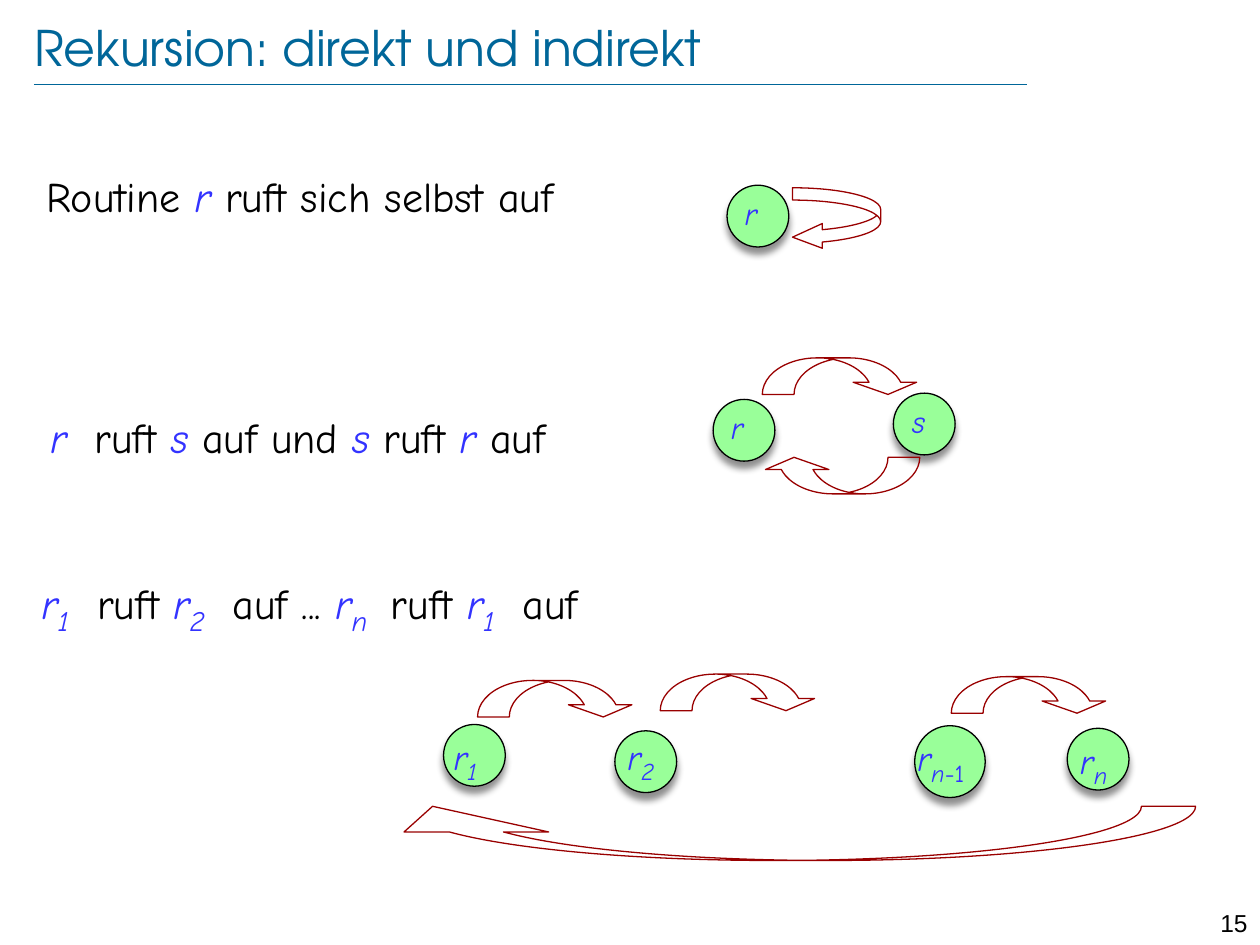
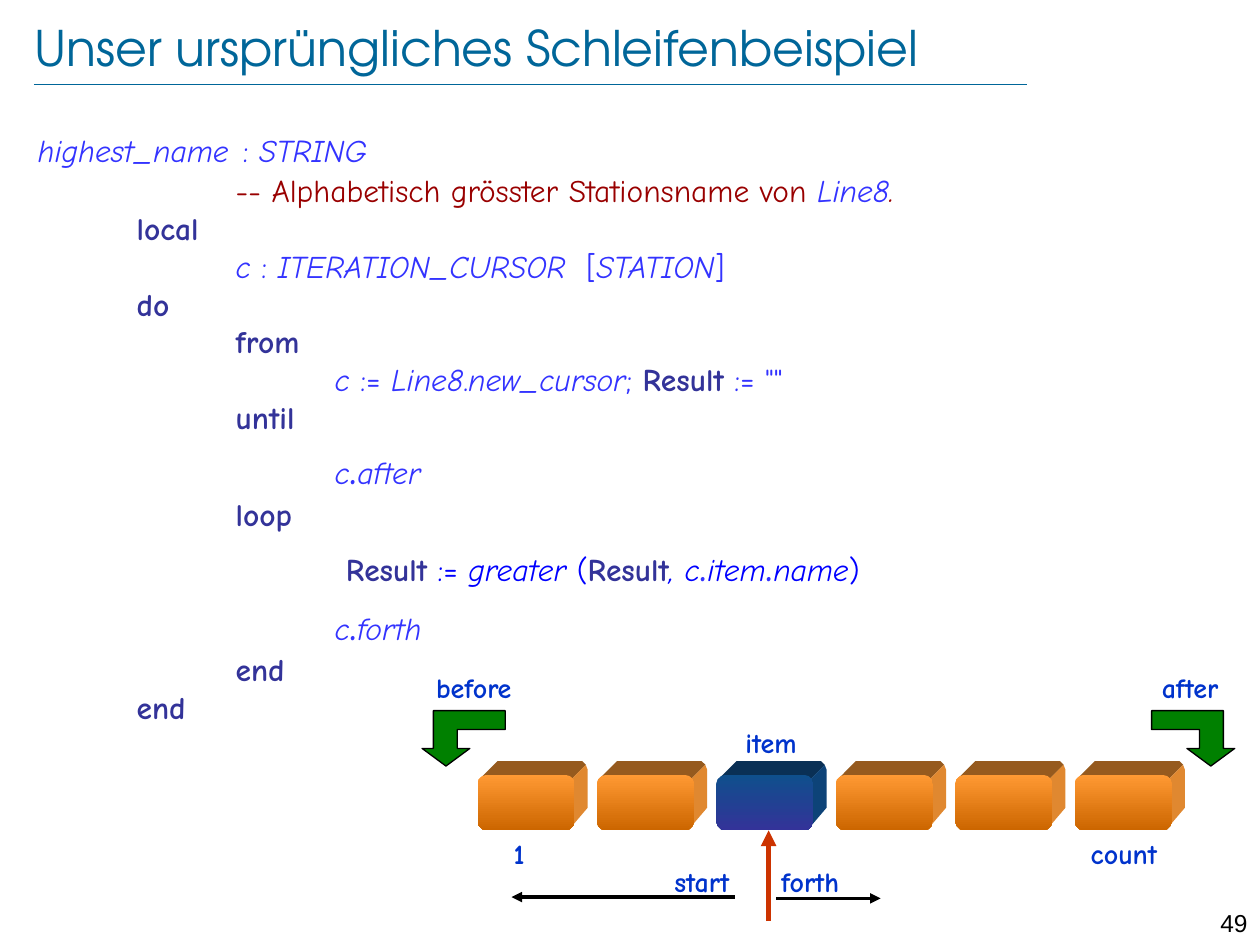
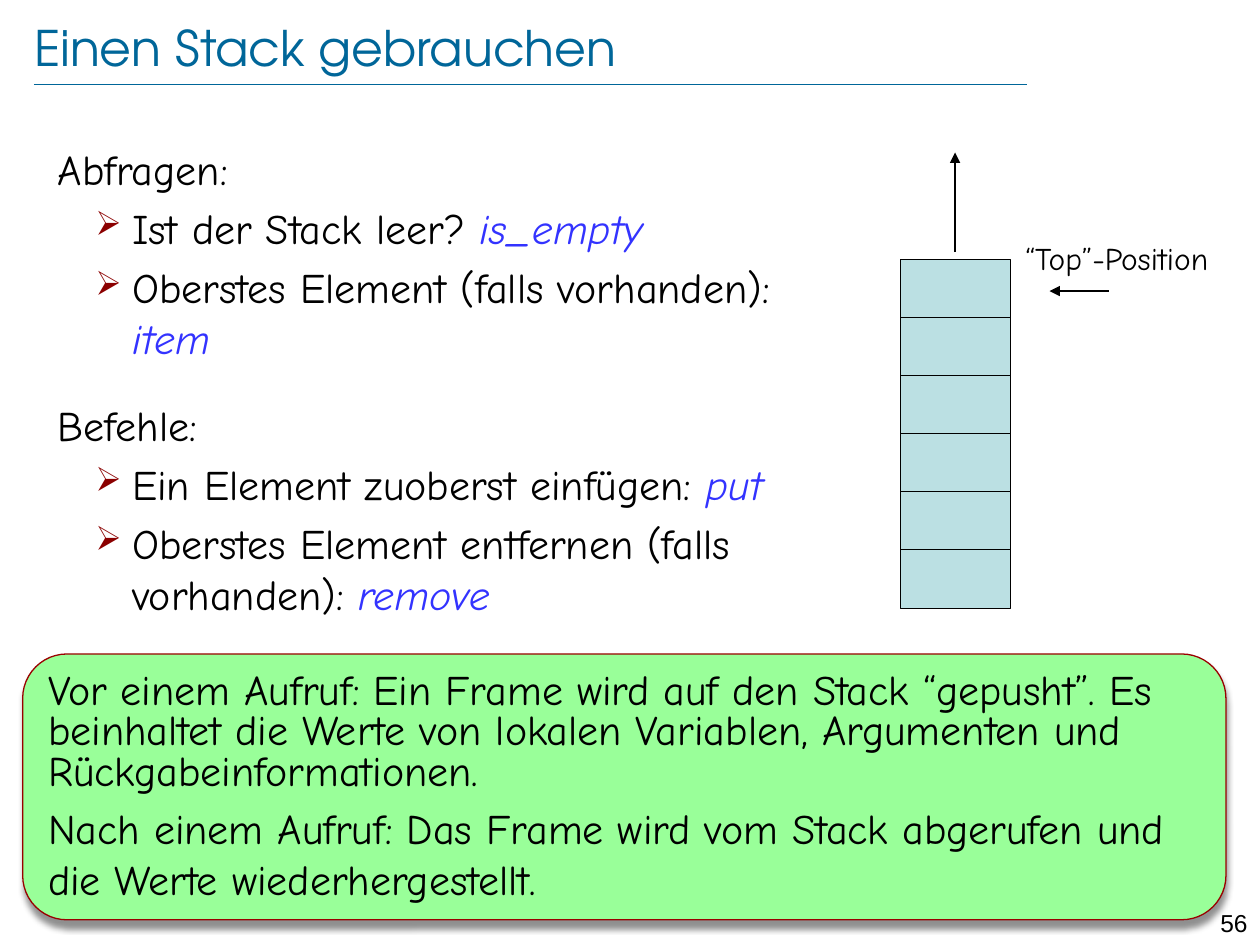
from typing import NamedTuple

from lxml.etree import SubElement
from pptx import Presentation
from pptx.dml.color import RGBColor
from pptx.enum.shapes import MSO_CONNECTOR, MSO_SHAPE
from pptx.enum.text import MSO_ANCHOR, PP_ALIGN
from pptx.oxml.ns import qn
from pptx.util import Inches, Pt

WIDE, HIGH = Inches(10), Inches(7.5)
COL, ROW = WIDE / 100, HIGH / 75

INK = {
    "teal": "006699", "black": "000000", "violet": "3333FF", "navy": "333399",
    "blue": "0000FF", "label": "0033CC", "wine": "990000", "bullet": "8B0000",
    "mint": "99FF99", "ice": "BBE0E3", "green": "008000", "red": "CC3300",
    "amber": "FF9933", "rust": "CC6600", "brown": "965A1E", "tan": "E08830",
    "sea": "0F4F8C", "night": "0A3055", "steel": "0D4378",
}
HAND = "Comic Neue"
TAB = 0.786


class Box(NamedTuple):
    """Left, top, width and height in grid columns and rows."""
    col: float
    row: float
    wide: float
    high: float

    def emu(self) -> tuple[int, ...]:
        return (round(self.col * COL), round(self.row * ROW),
                round(self.wide * COL), round(self.high * ROW))


class Style(NamedTuple):
    ink: str
    bold: bool = False
    slant: bool = False
    grow: int = 0
    drop: int = 0
    face: str = HAND


class Line(NamedTuple):
    """One paragraph: its runs, and how it is set."""
    runs: list
    depth: int = 0
    before: float = 0
    pitch: float = 1.0
    bullet: bool = False


class Ball(NamedTuple):
    box: Box
    tag: Box
    runs: list
    size: int


class Curve(NamedTuple):
    box: Box
    bends: tuple
    kind: MSO_SHAPE = MSO_SHAPE.CURVED_DOWN_ARROW
    flip: bool = False


class Arrow(NamedTuple):
    start: tuple
    end: tuple
    ink: str
    width: float
    head: bool = True


class Cube(NamedTuple):
    """Colours of a block: front from and to, top, side."""
    light: str
    dark: str
    top: str
    side: str


STYLES = {
    "title": Style("teal", face="TeX Gyre Adventor"),
    "page": Style("black", face="Arial"),
    "text": Style("black"),
    "name": Style("violet", slant=True),
    "gap": Style("violet", slant=True, grow=6),
    "sign": Style("violet"),
    "dot": Style("violet", grow=10),
    "sub": Style("violet", slant=True, grow=4, drop=-25),
    "low": Style("violet", grow=4, drop=-25),
    "key": Style("navy", bold=True),
    "note": Style("wine"),
    "stop": Style("wine", slant=True),
    "call": Style("blue", slant=True),
    "mark": Style("blue"),
    "label": Style("label", bold=True),
}


def shade(name: str) -> RGBColor:
    return RGBColor.from_string(INK[name])


def apply(target, values: dict) -> None:
    for key, value in values.items():
        setattr(target, key, value)


def add_run(para, kind: str, text: str, size: int) -> None:
    style = STYLES[kind]
    run = para.add_run()
    run.text = text
    apply(run.font, {"name": style.face, "size": Pt(size + style.grow),
                     "bold": style.bold, "italic": style.slant})
    run.font.color.rgb = shade(style.ink)
    if style.drop:
        run.font._element.set("baseline", str(style.drop * 1000))


def add_tabs(para) -> None:
    stops = SubElement(para._p.get_or_add_pPr(), qn("a:tabLst"))
    for step in range(1, 6):
        SubElement(stops, qn("a:tab"), pos=str(Inches(TAB * step)), algn="l")


def add_bullet(para) -> None:
    props = para._p.get_or_add_pPr()
    apply_xml = {"marL": Inches(0.59), "indent": Inches(-0.29), "lvl": 1}
    for key, value in apply_xml.items():
        props.set(key, str(value))
    tint = SubElement(props, qn("a:buClr"))
    SubElement(tint, qn("a:srgbClr"), val=INK["bullet"])
    SubElement(props, qn("a:buSzPct"), val="80000")
    SubElement(props, qn("a:buChar"), char="➢")


def write(frame, lines: list[Line], size: int, align=PP_ALIGN.LEFT) -> None:
    frame.word_wrap = True
    for index, line in enumerate(lines):
        para = frame.add_paragraph() if index else frame.paragraphs[0]
        if line.bullet:
            add_bullet(para)
        if line.depth:
            add_tabs(para)
            para.add_run().text = "\t" * line.depth
            para.runs[0].font.size = Pt(size)
        apply(para, {"alignment": align, "space_before": Pt(line.before),
                     "line_spacing": line.pitch})
        for kind, text in line.runs:
            add_run(para, kind, text, size)


def add_text(slide, box: Box, lines: list[Line], size: int,
             align=PP_ALIGN.LEFT, tight: bool = False):
    frame = slide.shapes.add_textbox(*box.emu()).text_frame
    if tight:
        apply(frame, dict.fromkeys(
            ("margin_left", "margin_top", "margin_right", "margin_bottom"), 0))
    write(frame, lines, size, align)
    return frame


def paint(shape, fill: str = "", edge: str = "") -> None:
    shape.shadow.inherit = False
    if fill:
        shape.fill.solid()
        shape.fill.fore_color.rgb = shade(fill)
    else:
        shape.fill.background()
    if edge:
        shape.line.color.rgb = shade(edge)
        shape.line.width = Pt(0.75)
    else:
        shape.line.fill.background()


def add_form(slide, kind, box: Box, fill: str = "", edge: str = ""):
    shape = slide.shapes.add_shape(kind, *box.emu())
    paint(shape, fill, edge)
    return shape


def add_outline(slide, points: list[tuple], fill: str, edge: str = "") -> None:
    spots = [(round(x * COL), round(y * ROW)) for x, y in points]
    maker = slide.shapes.build_freeform(*spots[0])
    maker.add_line_segments(spots[1:])
    paint(maker.convert_to_shape(), fill, edge)


def cast(shape) -> None:
    """Drop a soft shadow straight down."""
    effects = shape._element.spPr.find(qn("a:effectLst"))
    drop = SubElement(effects, qn("a:outerShdw"), blurRad=str(Pt(4)), dist=str(Pt(4)),
                      dir="5400000", algn="ctr", rotWithShape="0")
    tint = SubElement(drop, qn("a:srgbClr"), val=INK["black"])
    SubElement(tint, qn("a:alpha"), val="43000")


def add_arrow(slide, arrow: Arrow) -> None:
    (x, y), (u, v) = arrow.start, arrow.end
    link = slide.shapes.add_connector(
        MSO_CONNECTOR.STRAIGHT, round(x * COL), round(y * ROW), round(u * COL), round(v * ROW))
    link.line.color.rgb = shade(arrow.ink)
    link.line.width = Pt(arrow.width)
    if arrow.head:
        SubElement(link.line._get_or_add_ln(), qn("a:tailEnd"), type="triangle")
    SubElement(link._element.spPr, qn("a:effectLst"))


def add_ball(slide, ball: Ball) -> None:
    cast(add_form(slide, MSO_SHAPE.OVAL, ball.box, "mint", "black"))
    add_text(slide, ball.tag, [Line(ball.runs)], ball.size, tight=True)


def add_curve(slide, curve: Curve) -> None:
    shape = add_form(slide, curve.kind, curve.box, edge="wine")
    for index, bend in enumerate(curve.bends):
        shape.adjustments[index] = bend
    if curve.flip:
        for key in ("flipH", "flipV"):
            shape._element.spPr.xfrm.set(key, "1")


def add_cube(slide, box: Box, cube: Cube) -> None:
    x, y, right, base = box.col, box.row, box.col + box.wide, box.row + box.high
    back, lift = 1.05, 1.1
    add_outline(slide, [(x + 0.2, y + 0.3), (x + 1.6, y - lift), (right + 0.6, y - lift),
                        (right + 0.9, y - 0.8), (right - 0.2, y + 0.3)], cube.top)
    add_outline(slide, [(right - 0.2, y + 0.3), (right + 0.9, y - 0.8),
                        (right + back, y - 0.4), (right + back, base - 1.8),
                        (right - 0.4, base - 0.1)], cube.side)
    front = add_form(slide, MSO_SHAPE.ROUNDED_RECTANGLE, box)
    front.fill.gradient()
    front.fill.gradient_angle = 270
    for stop, name in zip(front.fill.gradient_stops, (cube.light, cube.dark)):
        stop.color.rgb = shade(name)


def add_slide(deck, title: str, page: int):
    """Blank slide with title, rule and page number."""
    slide = deck.slides.add_slide(deck.slide_layouts[6])
    add_arrow(slide, Arrow((2.7, 6.7), (81.5, 6.7), "teal", 0.25, head=False))
    add_text(slide, Box(94.5, 71.6, 5.5, 2.4), [Line([("page", str(page))])], 14, PP_ALIGN.RIGHT)
    frame = add_text(slide, Box(2.7, 1.3, 86.9, 4.8), [Line([("title", title)])], 28, tight=True)
    frame.vertical_anchor = MSO_ANCHOR.MIDDLE
    return slide


def draw_calls(deck) -> None:
    slide = add_slide(deck, "Rekursion: direkt und indirekt", 15)
    texts = [
        (Box(2.7, 13, 50.7, 6.1),
         [("text", "Routine "), ("name", "r "), ("text", "ruft sich selbst auf")]),
        (Box(3, 32.2, 50.4, 8.4),
         [("name", "r"), ("text", "  ruft "), ("name", "s"), ("text", " auf und "),
          ("name", "s"), ("text", " ruft "), ("name", "r "), ("text", "auf")]),
        (Box(2.3, 44.8, 52.6, 6.8),
         [("name", "r"), ("sub", "1"), ("text", "  ruft "), ("name", "r"), ("sub", "2"),
          ("text", "  auf ... "), ("name", "r"), ("sub", "n "), ("text", " ruft "),
          ("name", "r"), ("sub", "1"), ("text", "  auf")]),
    ]
    for box, runs in texts:
        add_text(slide, box, [Line(runs)], 24)

    last = [("name", "r"), ("sub", "n")]
    balls = [
        Ball(Box(57.7, 14.7, 4.9, 4.9), Box(59.1, 15.4, 2.6, 3.6), [("name", "r")], 18),
        Ball(Box(56.6, 31.7, 4.9, 4.9), Box(58, 32.4, 2.6, 3.6), [("name", "r")], 18),
        Ball(Box(70.9, 31.2, 4.9, 4.9), Box(72.4, 31.9, 2.6, 3.6), [("name", "s")], 18),
        Ball(Box(35.2, 57.5, 4.9, 4.9), Box(36, 57.8, 3.3, 3.6),
             [("name", "r"), ("sub", "1")], 20),
        Ball(Box(48.8, 58, 4.9, 4.9), Box(49.8, 57.8, 3.3, 3.6),
             [("name", "r"), ("sub", "2")], 20),
        Ball(Box(72.6, 57.6, 5.6, 5.7), Box(72.8, 57.9, 5.5, 3.6), last + [("low", "-1")], 20),
        Ball(Box(84.7, 57.8, 4.9, 4.9), Box(85.7, 58.1, 5.5, 3.6), last, 20),
    ]
    for ball in balls:
        add_ball(slide, ball)

    bends = (0.869, 1.737, 0.333)
    hops = [(60.5, 28.4, False), (60.5, 36.3, True),
            (37.9, 54, False), (52.4, 53.5, False), (75.5, 53.7, False)]
    curves = [Curve(Box(x, y, 12.5, 2.9), bends, flip=flip) for x, y, flip in hops]
    curves += [
        Curve(Box(62.9, 14.9, 7, 4.9), (0.2, 0.4, 0.482), MSO_SHAPE.CURVED_LEFT_ARROW),
        Curve(Box(28.6, 64, 66.3, 4.3), (5.064, 2.67, 0.473), flip=True),
    ]
    for curve in curves:
        add_curve(slide, curve)


def draw_loop(deck) -> None:
    slide = add_slide(deck, "Unser ursprüngliches Schleifenbeispiel", 49)
    code = [
        (0, [("name", "highest_name"), ("gap", " "), ("sign", ":"), ("name", " STRING")]),
        (2, [("note", "-- Alphabetisch grösster Stationsname von "),
             ("name", "Line8"), ("stop", ".")]),
        (1, [("key", "local")]),
        (2, [("name", "c "), ("sign", ": "), ("name", "ITERATION_CURSOR "), ("sign", " ["),
             ("name", "STATION"), ("sign", "]")]),
        (1, [("key", "do")]),
        (2, [("key", "from")]),
        (3, [("name", "c "), ("sign", ":= "), ("name", "Line8"), ("sign", "."),
             ("name", "new_cursor"), ("sign", "; "), ("key", "Result"), ("sign", ' := ""')]),
        (2, [("key", "until")]),
        (3, [("name", "c"), ("dot", "."), ("name", "after")]),
        (2, [("key", "loop")]),
        (3, [("key", " Result"), ("mark", " := "), ("call", "greater "), ("mark", "("),
             ("key", "Result"), ("call", ", c"), ("dot", "."), ("call", "item"),
             ("dot", "."), ("call", "name"), ("mark", ")")]),
        (3, [("name", "c"), ("dot", "."), ("name", "forth")]),
        (2, [("key", "end")]),
        (1, [("key", "end")]),
    ]
    add_text(slide, Box(2, 9.1, 91.8, 43.9), [Line(runs, depth) for depth, runs in code], 18)

    plain = Cube("amber", "rust", "brown", "tan")
    chosen = Cube("sea", "navy", "night", "steel")
    for step in range(6):
        add_cube(slide, Box(37.9 + 9.48 * step, 61.5, 7.7, 4.4), chosen if step == 2 else plain)

    for arrow in (Arrow((61, 73.1), (61, 65.9), "red", 3),
                  Arrow((61.6, 71.3), (69.9, 71.3), "black", 2),
                  Arrow((58.3, 71.2), (40.6, 71.2), "black", 2)):
        add_arrow(slide, arrow)

    hook = [(4.7, 4.4), (2.8, 3), (3.8, 3), (3.8, 1.5), (0, 1.5),
            (0, 0), (5.7, 0), (5.7, 3), (6.6, 3)]
    for origin, sign in ((91.4, 1), (40.1, -1)):
        points = [(origin + sign * x, 56.4 + y) for x, y in hook]
        add_outline(slide, points, "green", "black")

    labels = [("item", 56.8, 57.1, 8.8), ("count", 84.8, 65.9, 8.8), ("1", 36.8, 65.9, 8.8),
              ("forth", 59.9, 68.1, 8.8), ("start", 51.3, 68.1, 8.8),
              ("after", 90.4, 52.7, 8.1), ("before", 32.7, 52.7, 9.8)]
    for text, x, y, wide in labels:
        add_text(slide, Box(x, y, wide, 3.7), [Line([("label", text)])], 16, PP_ALIGN.CENTER)


def draw_stack(deck) -> None:
    slide = add_slide(deck, "Einen Stack gebrauchen", 56)

    def point(text: str, name: str) -> Line:
        return Line([("text", text), ("name", name)], before=5, bullet=True)

    add_text(slide, Box(3.6, 10.9, 64.7, 36.6), [
        Line([("text", "Abfragen:")]),
        point("Ist der Stack leer? ", "is_empty"),
        point("Oberstes Element (falls vorhanden): ", "item"),
        Line([("text", "Befehle:")], before=21),
        point("Ein Element zuoberst einfügen: ", "put"),
        point("Oberstes Element entfernen (falls vorhanden): ", "remove"),
    ], 24)

    for step in range(6):
        add_form(slide, MSO_SHAPE.RECTANGLE, Box(71.5, 20.6 + 4.6 * step, 8.7, 4.7),
                 "ice", "black")
    for arrow in (Arrow((88, 23.1), (83.3, 23.1), "black", 0.75),
                  Arrow((75.8, 20), (75.8, 12.1), "black", 0.75)):
        add_arrow(slide, arrow)
    add_text(slide, Box(80.4, 18.5, 19.3, 4), [Line([("text", "“Top”-Position")])], 18)

    panel = add_form(slide, MSO_SHAPE.ROUNDED_RECTANGLE, Box(1.8, 51.9, 95.5, 21.1),
                     "mint", "wine")
    cast(panel)
    panel.text_frame.vertical_anchor = MSO_ANCHOR.TOP
    write(panel.text_frame, [
        Line([("text", "Vor einem Aufruf: Ein Frame wird auf den Stack “gepusht”. Es beinhaltet "
               "die Werte von lokalen Variablen, Argumenten und Rückgabeinformationen.")],
             pitch=0.8),
        Line([("text", "Nach einem Aufruf: Das Frame wird vom Stack abgerufen und "
               "die Werte wiederhergestellt.")], before=5),
    ], 24)


def main() -> None:
    deck = Presentation()
    apply(deck, {"slide_width": WIDE, "slide_height": HIGH})
    for draw in (draw_calls, draw_loop, draw_stack):
        draw(deck)
    deck.save("out.pptx")


if __name__ == "__main__":
    main()
